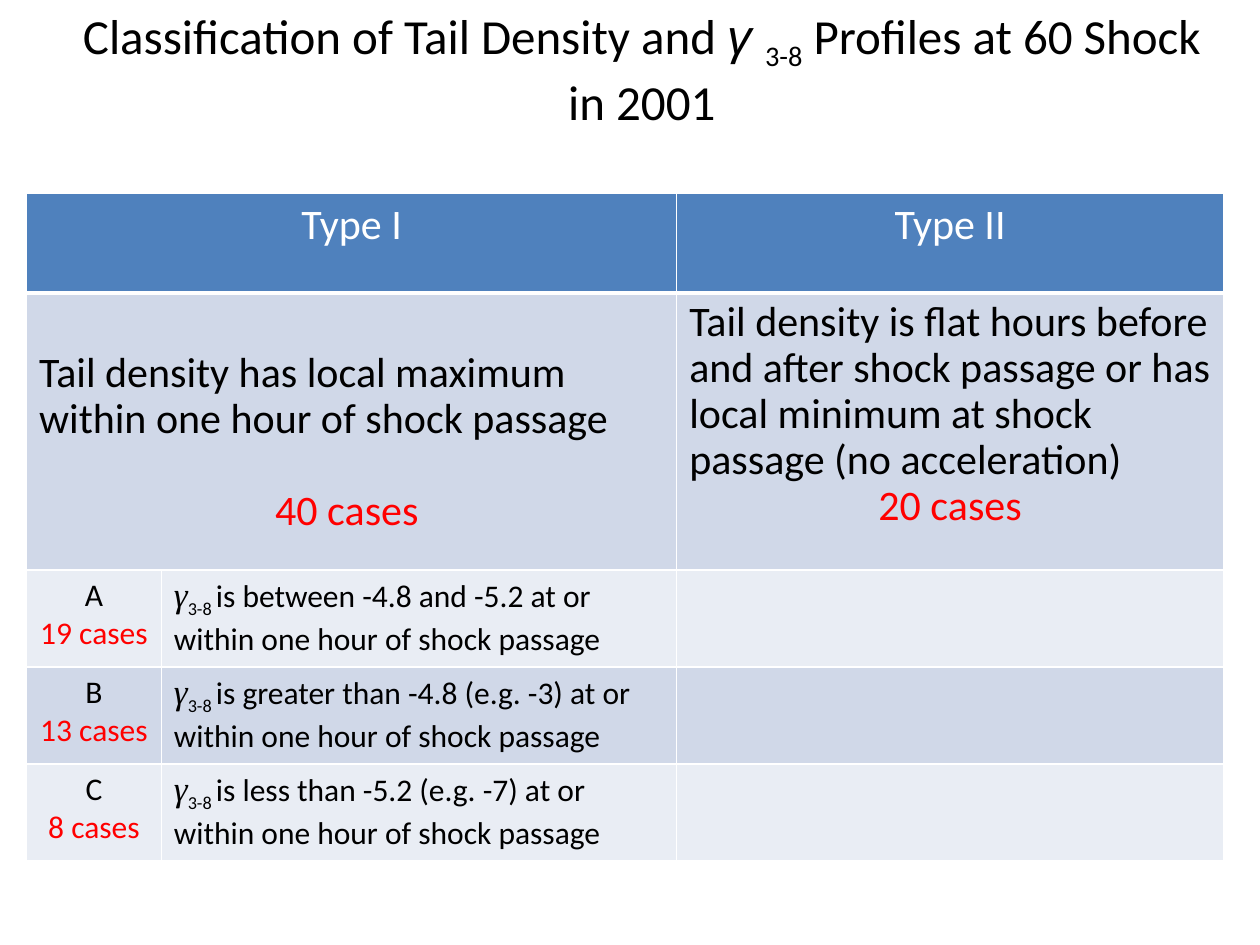
from lxml import etree
from pptx import Presentation
from pptx.dml.color import RGBColor
from pptx.enum import text
from pptx.oxml import ns
from pptx.util import Pt


class Theme:
    font, title_symbol, symbol = "Calibri", "Arial", "Times New Roman"
    black, white, red = "000000", "FFFFFF", "FF0000"
    header, dark_band, light_band = "4F81BD", "D0D8E8", "E9EDF4"
    title, large, small, gamma = 28, 24, 18, 20
    rule, header_rule = 1, 3


# Content
TITLE = ("Classification of Tail Density and ", "γ ", "3-8", " Profiles at 60 Shock in 2001")
TYPES = [
    ("Type I", "Tail density has local maximum within one hour of shock passage", "40 cases "),
    ("Type II", "Tail density is flat hours before and after shock passage or has "
                "local minimum at shock passage (no acceleration)", "20 cases"),
]
SUBTYPES = [
    ("A", "19 cases", "is between -4.8 and -5.2 at or within one hour of shock passage"),
    ("B", "13 cases", "is greater than -4.8 (e.g. -3) at or within one hour of shock passage"),
    ("C", "8 cases", "is less than -5.2 (e.g. -7) at or within one hour of shock passage"),
]

# Layout
TITLE_BOX = (34.5, -0.7, 664.5, 75)
TABLE_LEFT, TABLE_TOP = 15.2, 110.2
COLUMNS = [77, 294.5, 312.5]
ROWS = [57.2, 158.4] + [55.4] * len(SUBTYPES)
TYPE_COLUMNS = [0, 2]
DESCRIPTION_TOPS = [32.7, 3.6]
CASES_GAPS = [26.4, 0]

CENTER, LEFT = text.PP_ALIGN.CENTER, text.PP_ALIGN.LEFT


def add_span(para, words, size=Theme.small, font=Theme.font, color=Theme.black,
             italic=False, subscript=False):
    span = para.add_run()
    span.text = words
    span.font.size, span.font.name = Pt(size), font
    span.font.bold, span.font.italic = False, italic
    span.font.color.rgb = RGBColor.from_string(color)
    if subscript:
        span.font._element.set("baseline", "-25000")


def add_para(frame, align=LEFT, spacing=1.0, gap=0):
    first = frame.paragraphs[0]
    para = frame.add_paragraph() if first.runs else first
    para.alignment, para.line_spacing = align, spacing
    if gap:
        para.space_before = Pt(gap)
    return para


def format_cell(cell, fill, bottom):
    properties = cell._tc.get_or_add_tcPr()
    for side in "LRTB":
        width = bottom if side == "B" else Theme.rule
        line = etree.SubElement(properties, ns.qn(f"a:ln{side}"), w=str(Pt(width)))
        solid = etree.SubElement(line, ns.qn("a:solidFill"))
        etree.SubElement(solid, ns.qn("a:srgbClr"), val=Theme.white)
    cell.fill.solid()
    cell.fill.fore_color.rgb = RGBColor.from_string(fill)


def build_title(page):
    box = page.shapes.title
    box.left, box.top, box.width, box.height = map(Pt, TITLE_BOX)
    frame = box.text_frame
    frame.word_wrap = True
    frame.auto_size = text.MSO_AUTO_SIZE.NONE
    frame.vertical_anchor = text.MSO_ANCHOR.TOP
    para = add_para(frame, align=CENTER)
    before, symbol, index, after = TITLE
    add_span(para, before, size=Theme.title)
    add_span(para, symbol, size=Theme.title, font=Theme.title_symbol, italic=True)
    add_span(para, index, size=Theme.title, subscript=True)
    add_span(para, after, size=Theme.title)


def build_table(page):
    table = page.shapes.add_table(len(ROWS), len(COLUMNS), Pt(TABLE_LEFT), Pt(TABLE_TOP),
                                  Pt(sum(COLUMNS)), Pt(sum(ROWS))).table
    for column, width in zip(table.columns, COLUMNS):
        column.width = Pt(width)
    for row, height in zip(table.rows, ROWS):
        row.height = Pt(height)

    # Fills and rules
    for r in range(len(ROWS)):
        band = Theme.dark_band if r % 2 else Theme.light_band
        for c in range(len(COLUMNS)):
            format_cell(table.cell(r, c), Theme.header if r == 0 else band,
                        Theme.header_rule if r == 0 else Theme.rule)
    for r in (0, 1):
        table.cell(r, 0).merge(table.cell(r, 1))

    # Types and their descriptions
    for c, (name, description, cases), top, gap in zip(
            TYPE_COLUMNS, TYPES, DESCRIPTION_TOPS, CASES_GAPS):
        add_span(add_para(table.cell(0, c).text_frame, align=CENTER), name,
                 size=Theme.large, color=Theme.white)
        cell = table.cell(1, c)
        cell.margin_top = Pt(top)
        add_span(add_para(cell.text_frame, spacing=0.9), description, size=Theme.large)
        add_span(add_para(cell.text_frame, align=CENTER, spacing=0.9, gap=gap), cases,
                 size=Theme.large, color=Theme.red)

    # Subtypes of the first type
    for r, (letter, cases, condition) in enumerate(SUBTYPES, start=2):
        frame = table.cell(r, 0).text_frame
        add_span(add_para(frame, align=CENTER), letter)
        add_span(add_para(frame, align=CENTER), cases, color=Theme.red)
        para = add_para(table.cell(r, 1).text_frame)
        add_span(para, "γ", size=Theme.gamma, font=Theme.symbol, italic=True)
        add_span(para, "3-8 ", subscript=True)
        add_span(para, condition)


def main():
    deck = Presentation()
    deck.slide_width, deck.slide_height = Pt(720), Pt(540)
    page = deck.slides.add_slide(deck.slide_layouts.get_by_name("Title Only"))
    build_title(page)
    build_table(page)
    deck.save("out.pptx")


if __name__ == "__main__":
    main()
